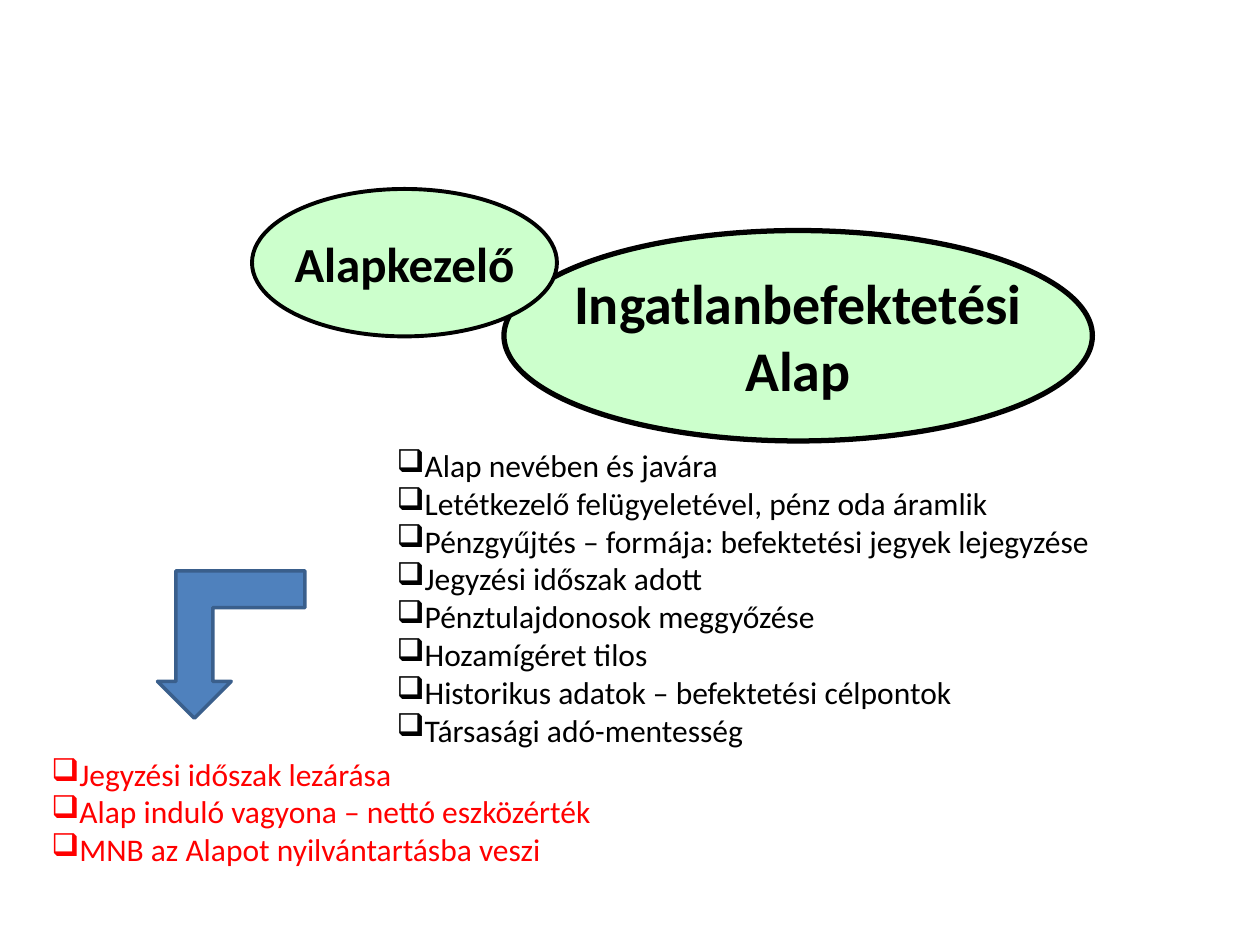
from lxml.etree import SubElement
from pptx import Presentation
from pptx.dml.color import RGBColor
from pptx.enum.shapes import MSO_SHAPE as Shape
from pptx.enum.text import MSO_ANCHOR as Anchor, MSO_AUTO_SIZE as AutoSize, PP_ALIGN as Align
from pptx.oxml.ns import qn
from pptx.util import Inches, Pt

COLORS = {"black": "000000", "red": "FF0000", "green": "CCFFCC",
          "blue": "4F81BD", "navy": "3A5F8C"}
FONT = "Calibri"

# Content: box is left, top, width, height in inches
ELLIPSES = [
    {"lines": ["Ingatlanbefektetési", "Alap"], "box": (4, 1.83, 4.67, 1.67),
     "size": 32, "line": 3},
    {"lines": ["Alapkezelő"], "box": (2, 1.5, 2.42, 1.17),
     "size": 28, "line": 2.25},
]
LISTS = [
    {"box": (3.05, 3.49, 6.17, 3.13), "color": "black", "lines": [
        "Alap nevében és javára",
        "Letétkezelő felügyeletével, pénz oda áramlik",
        "Pénzgyűjtés – formája: befektetési jegyek lejegyzése",
        "Jegyzési időszak adott",
        "Pénztulajdonosok meggyőzése",
        "Hozamígéret tilos",
        "Historikus adatok – befektetési célpontok",
        "Társasági adó-mentesség",
    ]},
    {"box": (0.31, 5.94, 5, 1.01), "color": "red", "lines": [
        "Jegyzési időszak lezárása",
        "Alap induló vagyona – nettó eszközérték",
        "MNB az Alapot nyilvántartásba veszi",
    ]},
]
ARROW_BOX = (1.25, 4.53, 1.17, 1.17)


def rgb(name):
    return RGBColor.from_string(COLORS[name])


def add_shape(slide, kind, box, fill, line, width):
    sp = slide.shapes.add_shape(kind, *map(Inches, box))
    sp.shadow.inherit = False
    sp.fill.solid()
    sp.fill.fore_color.rgb = rgb(fill)
    sp.line.color.rgb = rgb(line)
    sp.line.width = Pt(width)
    return sp


def write_lines(tf, lines, size, color, bold=False, align=Align.LEFT, bullet=None):
    for i, text in enumerate(lines):
        p = tf.paragraphs[0] if i == 0 else tf.add_paragraph()
        p.text = text
        p.alignment = align
        p.font.name = FONT
        p.font.size = Pt(size)
        p.font.bold = bold
        p.font.color.rgb = rgb(color)
        if bullet:
            bu = SubElement(p._p.get_or_add_pPr(), qn("a:buChar"), char=bullet)
            # bullets come before the default run properties
            bu.getparent().insert(0, bu)


prs = Presentation()
prs.slide_width, prs.slide_height = Inches(10), Inches(7.5)
slide = prs.slides.add_slide(prs.slide_layouts[6])

# Fund and fund manager
for item in ELLIPSES:
    sp = add_shape(slide, Shape.OVAL, item["box"], "green", "black", item["line"])
    tf = sp.text_frame
    tf.word_wrap = False
    tf.vertical_anchor = Anchor.MIDDLE
    write_lines(tf, item["lines"], item["size"], "black", True, Align.CENTER)

# Bulleted lists
for item in LISTS:
    tf = slide.shapes.add_textbox(*map(Inches, item["box"])).text_frame
    tf.word_wrap = True
    tf.auto_size = AutoSize.SHAPE_TO_FIT_TEXT
    write_lines(tf, item["lines"], 18, item["color"], bullet="❑")

# Arrow to the closing steps
arrow = add_shape(slide, Shape.BENT_UP_ARROW, ARROW_BOX, "blue", "navy", 2)
arrow.rotation = 180

prs.save("out.pptx")
